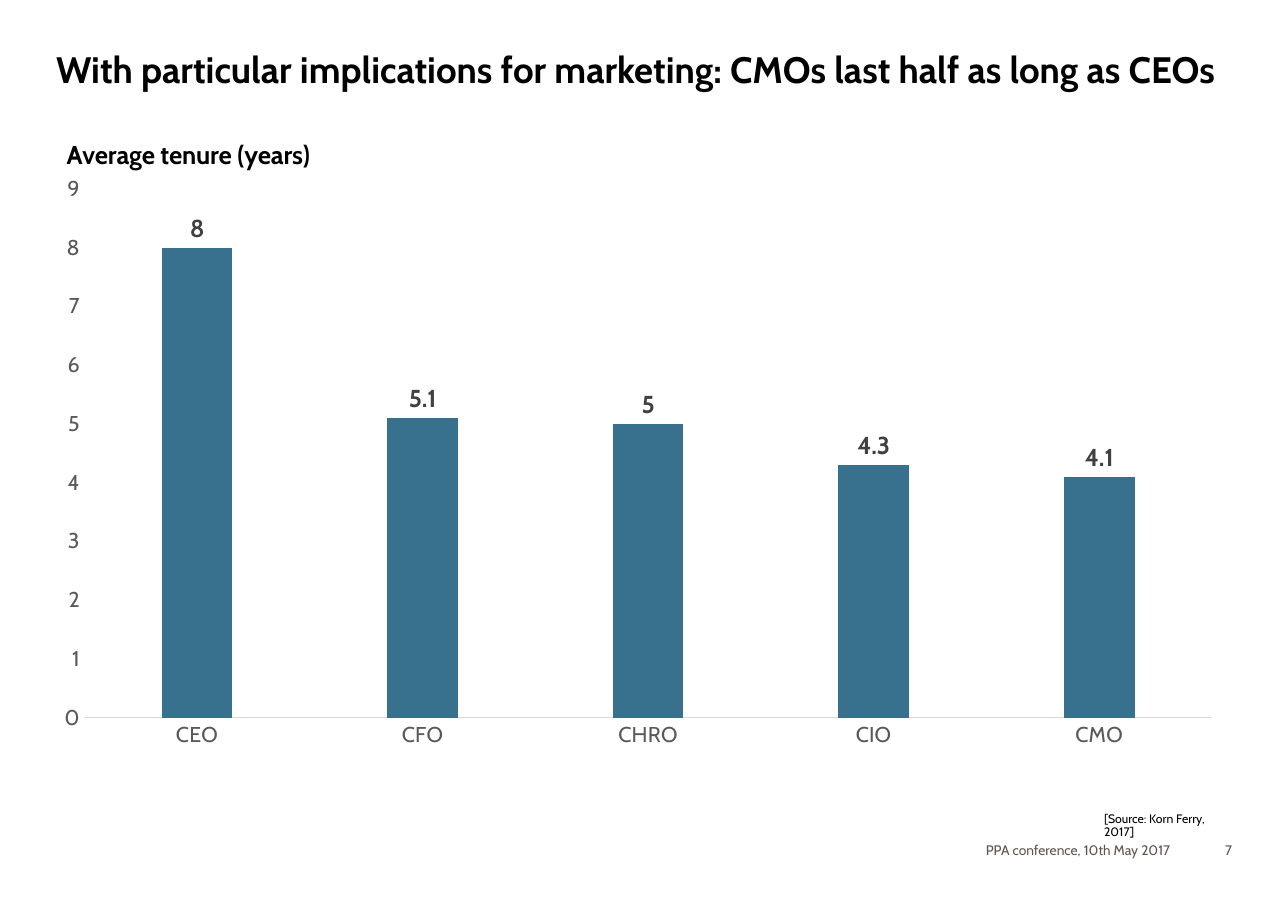
from pptx import Presentation
from pptx.chart.data import CategoryChartData
from pptx.dml.color import RGBColor
from pptx.enum.chart import XL_CHART_TYPE, XL_LABEL_POSITION, XL_TICK_MARK
from pptx.enum.text import MSO_ANCHOR, PP_ALIGN
from pptx.oxml import parse_xml
from pptx.oxml.ns import nsdecls, qn
from pptx.util import Pt

PX = 914400 / 110.2
FONT = "Cabin"
BLACK = RGBColor(0x00, 0x00, 0x00)
BROWN = RGBColor(0x60, 0x55, 0x4A)
BLUE = RGBColor(0x38, 0x71, 0x8E)
AXIS_GREY = RGBColor(0x59, 0x59, 0x59)
LABEL_GREY = RGBColor(0x40, 0x40, 0x40)
LINE_GREY = RGBColor(0xD9, 0xD9, 0xD9)
COLUMN = XL_CHART_TYPE.COLUMN_CLUSTERED
NO_TICK = XL_TICK_MARK.NONE
OUTSIDE = XL_LABEL_POSITION.OUTSIDE_END
LEFT, RIGHT = PP_ALIGN.LEFT, PP_ALIGN.RIGHT
TOP = MSO_ANCHOR.TOP

SLIDE_SIZE = (1288, 911)
TITLE = "With particular implications for marketing: CMOs last half as long as CEOs"
TITLE_BOX = (56, 47, 1176, 77)
CHART_BOX = (56, 126, 1176, 707)
CHART_TITLE = "Average tenure (years)"
TENURES = {"CEO": 8, "CFO": 5.1, "CHRO": 5, "CIO": 4.3, "CMO": 4.1}
FOOTERS = [
    ("PPA conference, 10th May 2017", (446, 842, 724, 43)),
    ("7", (1026, 842, 206, 43)),
]
SOURCE = "[Source: Korn Ferry, 2017]"
SOURCE_BOX = (1093, 808, 152, 25)


def emu(lengths):
    return [round(length * PX) for length in lengths]


def style(font, size, color, bold=False):
    font.name, font.size, font.bold = FONT, Pt(size), bold
    font.color.rgb = color


def fill_text(s, text, size, color, bold=False, align=LEFT, insets=(0, 0, 0, 0)):
    """Set the text of a shape; insets are left, top, right, bottom in px."""
    tf = s.text_frame
    tf.word_wrap = True
    tf.vertical_anchor = TOP
    tf.margin_left, tf.margin_top, tf.margin_right, tf.margin_bottom = emu(insets)
    tf.text = text
    p = tf.paragraphs[0]
    p.alignment = align
    style(p.runs[0].font, size, color, bold)
    return p


def place(element, index, **layout):
    """Give a chart part a manual layout as its child at the index."""
    for old in element.findall(qn("c:layout")):
        element.remove(old)
    parts = "".join(f'<c:{tag} val="{val}"/>' for tag, val in layout.items())
    element.insert(index, parse_xml(
        f'<c:layout {nsdecls("c")}><c:manualLayout>{parts}</c:manualLayout></c:layout>'))


def add_tenure_chart(slide):
    data = CategoryChartData()
    data.categories = list(TENURES)
    data.add_series(CHART_TITLE, list(TENURES.values()))
    chart = slide.shapes.add_chart(COLUMN, *emu(CHART_BOX), data).chart
    style(chart.font, 14, BLACK)
    chart.has_legend = False

    chart.has_title = True
    title = chart.chart_title
    title.text_frame.text = CHART_TITLE
    style(title.text_frame.paragraphs[0].runs[0].font, 16.8, BLACK, True)
    title.include_in_layout = False
    place(title._element, 1, xMode="edge", yMode="edge", x=0.005, y=0.01)
    place(chart._chartSpace.chart.plotArea, 0, layoutTarget="inner",
          xMode="edge", yMode="edge", x=0.024, y=0.089, w=0.959, h=0.748)

    for axis in (chart.category_axis, chart.value_axis):
        axis.major_tick_mark = axis.minor_tick_mark = NO_TICK
        axis.has_major_gridlines = False
        style(axis.tick_labels.font, 14, AXIS_GREY)
    line = chart.category_axis.format.line
    line.color.rgb, line.width = LINE_GREY, Pt(0.75)
    values = chart.value_axis
    values.format.line.fill.background()
    values.minimum_scale, values.maximum_scale, values.major_unit = 0, 9, 1

    plot = chart.plots[0]
    plot.gap_width, plot.overlap, plot.vary_by_categories = 219, -27, False
    fill = plot.series[0].format.fill
    fill.solid()
    fill.fore_color.rgb = BLUE
    labels = plot.series[0].data_labels
    labels.show_value, labels.position = True, OUTSIDE
    style(labels.font, 16, LABEL_GREY, True)


def main():
    prs = Presentation()
    prs.slide_width, prs.slide_height = emu(SLIDE_SIZE)
    slide = prs.slides.add_slide(prs.slide_layouts[5])

    title = slide.shapes.title
    title.left, title.top, title.width, title.height = emu(TITLE_BOX)
    fill_text(title, TITLE, 24, BLACK, bold=True, insets=(0, 0, 14, 7))

    for text, box in FOOTERS:
        fill_text(slide.shapes.add_textbox(*emu(box)), text, 9, BROWN, align=RIGHT)

    add_tenure_chart(slide)

    source = slide.shapes.add_textbox(*emu(SOURCE_BOX))
    p = fill_text(source, SOURCE, 8, BLACK, insets=(11, 5, 11, 5))
    p.line_spacing = 0.9

    prs.save("out.pptx")


if __name__ == "__main__":
    main()
